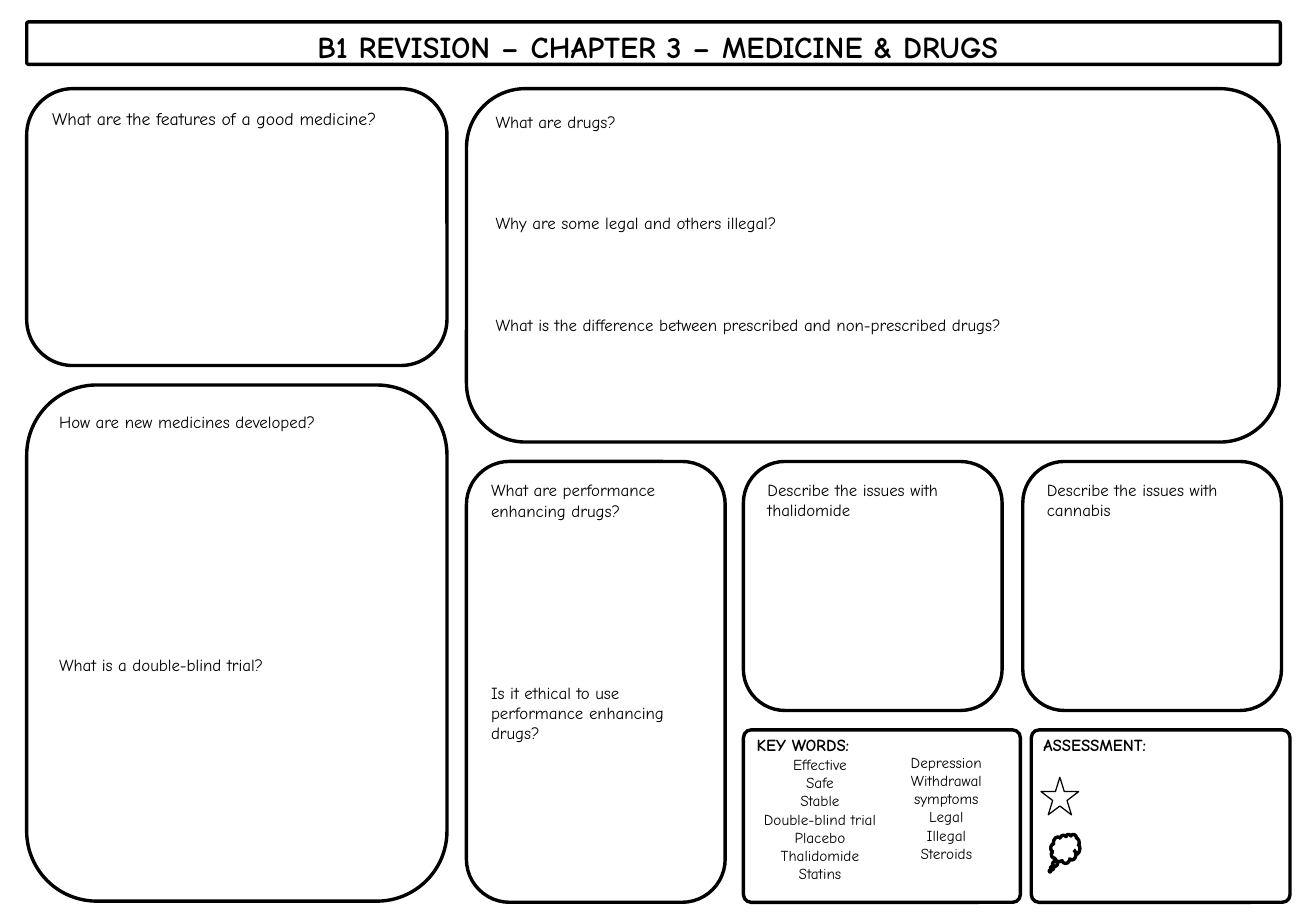
from pptx import Presentation
from pptx.dml.color import RGBColor
from pptx.enum.shapes import MSO_SHAPE as Shape
from pptx.enum.text import MSO_ANCHOR as Anchor, MSO_AUTO_SIZE as AutoSize, PP_ALIGN as Align
from pptx.util import Inches, Pt

FONT = "Comic Neue"
INK = "000000"
PAPER = "FFFFFF"
SHARP = [0.045]
LINE_PITCH = 12


def rgb(code):
    return RGBColor.from_string(code)


def write(frame, lines, size=10, bold=False, align=Align.LEFT, gap=0, more=False):
    for index, line in enumerate(lines):
        fresh = index == 0 and not more
        paragraph = frame.paragraphs[0] if fresh else frame.add_paragraph()
        paragraph.alignment = align
        paragraph.space_before = Pt(0 if index == 0 else gap)
        run = paragraph.add_run()
        run.text = line
        run.font.name = FONT
        run.font.size = Pt(size)
        run.font.bold = bold
        run.font.color.rgb = rgb(INK)


def outline(slide, kind, box, adjustments=(), fill=None, weight=2):
    shape = slide.shapes.add_shape(kind, *map(Inches, box))
    shape.shadow.inherit = False
    for index, value in enumerate(adjustments):
        shape.adjustments[index] = value
    if fill:
        shape.fill.solid()
        shape.fill.fore_color.rgb = rgb(fill)
    else:
        shape.fill.background()
    shape.line.color.rgb = rgb(INK)
    shape.line.width = Pt(weight)
    return shape


def text_area(slide, box):
    frame = slide.shapes.add_textbox(*map(Inches, box)).text_frame
    frame.word_wrap = True
    frame.margin_left = frame.margin_right = 0
    frame.margin_top = frame.margin_bottom = 0
    return frame


def banner(slide, box, heading):
    left, top, width, height = box
    outline(slide, Shape.ROUNDED_RECTANGLE, box, SHARP)
    title = slide.shapes.title
    title.left, title.top = Inches(left + 1.1), Inches(top)
    title.width, title.height = Inches(width - 2.13), Inches(height + 0.05)
    frame = title.text_frame
    frame.auto_size = AutoSize.NONE
    frame.vertical_anchor = Anchor.TOP
    write(frame, [heading], size=18, bold=True, align=Align.CENTER)


def question_card(slide, box, questions, blank_lines=0, size=10):
    card = outline(slide, Shape.ROUNDED_RECTANGLE, box, fill=PAPER)
    frame = card.text_frame
    frame.word_wrap = True
    frame.vertical_anchor = Anchor.TOP
    write(frame, questions, size=size, gap=blank_lines * LINE_PITCH)


def key_words(slide, box, first_words, second_words):
    left, top, width, height = box
    column = width / 2 - 0.1
    outline(slide, Shape.ROUNDED_RECTANGLE, box, SHARP)
    first = text_area(slide, (left + 0.11, top + 0.04, column, height - 0.1))
    write(first, ["KEY WORDS:"], bold=True)
    write(first, first_words, size=9, align=Align.CENTER, more=True)
    second = text_area(slide, (left + 0.11 + column, top + 0.19, column, height - 0.25))
    write(second, second_words, size=9, align=Align.CENTER)


def assessment(slide, box):
    left, top, width, height = box
    heading = text_area(slide, (left + 0.1, top + 0.04, width - 0.2, 0.25))
    write(heading, ["ASSESSMENT:"], bold=True)
    outline(slide, Shape.CLOUD_CALLOUT, (left + 0.16, top + 0.86, 0.24, 0.24), [-0.522, 0.761])
    outline(slide, Shape.STAR_5_POINT, (left + 0.08, top + 0.39, 0.31, 0.31), weight=0.75)
    outline(slide, Shape.ROUNDED_RECTANGLE, box, SHARP)


def main():
    deck = Presentation()
    deck.slide_width, deck.slide_height = Inches(65 / 6), Inches(7.6)
    slide = deck.slides.add_slide(deck.slide_layouts[5])

    banner(slide, (0.22, 0.18, 10.32, 0.35), "B1 REVISION – CHAPTER 3 – MEDICINE & DRUGS")
    key_words(
        slide, (6.12, 6.01, 2.28, 1.42),
        ["Effective", "Safe", "Stable", "Double-blind trial", "Placebo", "Thalidomide", "Statins"],
        ["Depression", "Withdrawal symptoms", "Legal", "Illegal", "Steroids"],
    )
    assessment(slide, (8.49, 6.01, 2.13, 1.42))

    question_card(slide, (0.22, 0.73, 3.46, 2.28),
                  ["What are the features of a good medicine?"], size=10.5)
    question_card(slide, (0.22, 3.17, 3.46, 4.25),
                  ["How are new medicines developed?", "What is a double-blind trial?"], 11)
    question_card(slide, (3.84, 0.73, 6.69, 2.91),
                  ["What are drugs?", "Why are some legal and others illegal?",
                   "What is the difference between prescribed and non-prescribed drugs?"], 4)
    question_card(slide, (3.84, 3.8, 2.13, 3.63),
                  ["What are performance enhancing drugs?",
                   "Is it ethical to use performance enhancing drugs?"], 8)
    for left, substance in ((6.12, "thalidomide"), (8.42, "cannabis")):
        question_card(slide, (left, 3.8, 2.13, 2.05), [f"Describe the issues with {substance}"])

    deck.save("out.pptx")


if __name__ == "__main__":
    main()
